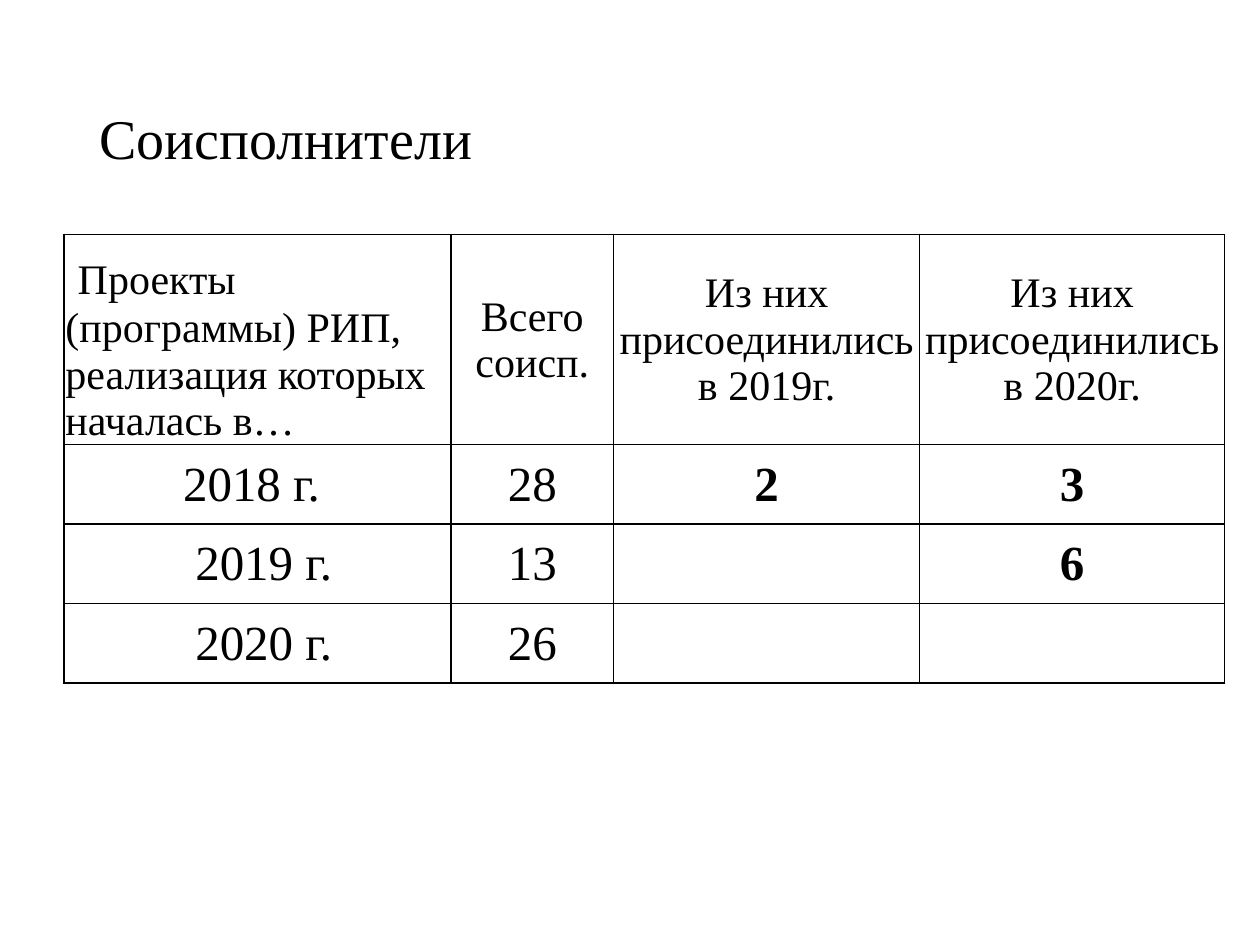
from lxml import etree
from pptx import Presentation
from pptx.dml.color import RGBColor
from pptx.enum.text import MSO_ANCHOR, PP_ALIGN
from pptx.oxml.ns import qn
from pptx.util import Inches, Pt

CENTER, LEFT = PP_ALIGN.CENTER, PP_ALIGN.LEFT
MIDDLE, BOTTOM = MSO_ANCHOR.MIDDLE, MSO_ANCHOR.BOTTOM
BLACK = RGBColor(0, 0, 0)
FONT = "Times New Roman"

TITLE = "Соисполнители"
HEADER = [
    " Проекты (программы) РИП, реализация которых началась в… ",
    "Всего соисп.",
    "Из них присоединились в 2019г.",
    "Из них присоединились в 2020г.",
]
BODY = [
    ["2018 г. ", "28", "2", "3"],
    [" 2019 г.", "13", "", "6"],
    [" 2020 г.", "26", "", ""],
]
COLUMN_WIDTHS = [3.07, 1.29, 2.43, 2.42]
ROW_HEIGHTS = [1.67] + [0.63] * len(BODY)
HEADER_SIZE, BODY_SIZE = 24, 28
FIRST_BOLD_COLUMN = 2


def set_font(font, size, bold=False):
    font.name = FONT
    font.size = Pt(size)
    font.bold = bold
    font.color.rgb = BLACK


def add_borders(cell):
    properties = cell._tc.get_or_add_tcPr()
    for position, side in enumerate(("lnL", "lnR", "lnT", "lnB")):
        line = etree.Element(qn(f"a:{side}"), w=str(Pt(1)))
        fill = etree.SubElement(line, qn("a:solidFill"))
        etree.SubElement(fill, qn("a:srgbClr"), val=str(BLACK))
        properties.insert(position, line)


def fill_cell(cell, text, row, column):
    cell.fill.background()
    add_borders(cell)
    cell.margin_left = cell.margin_right = cell.margin_top = Inches(0.01)
    cell.margin_bottom = 0
    first = row == column == 0
    cell.vertical_anchor = BOTTOM if first else MIDDLE
    if not text:
        return
    para = cell.text_frame.paragraphs[0]
    para.alignment = LEFT if first else CENTER
    set_font(para.font, BODY_SIZE if row else HEADER_SIZE,
             bold=row > 0 and column >= FIRST_BOLD_COLUMN)
    if first:
        # The leading space is set larger than the heading itself.
        lead = para.add_run()
        lead.text, text = text[0], text[1:]
        lead.font.size = Pt(BODY_SIZE)
    para.add_run().text = text


deck = Presentation()
deck.slide_width, deck.slide_height = Inches(10), Inches(7.5)
page = deck.slides.add_slide(deck.slide_layouts[5])

title = page.shapes.title
title.left, title.top = Inches(0.69), Inches(0.83)
title.width, title.height = Inches(8.62), Inches(0.59)
title.text_frame.text = TITLE
title.text_frame.vertical_anchor = MIDDLE
title_para = title.text_frame.paragraphs[0]
title_para.alignment = LEFT
title_para.line_spacing = 0.9
set_font(title_para.font, 32)

rows = [HEADER] + BODY
table = page.shapes.add_table(
    len(rows), len(HEADER), Inches(0.51), Inches(1.86),
    Inches(sum(COLUMN_WIDTHS)), Inches(sum(ROW_HEIGHTS))).table
table.first_row = table.horz_banding = False
for column, width in zip(table.columns, COLUMN_WIDTHS):
    column.width = Inches(width)
for table_row, height in zip(table.rows, ROW_HEIGHTS):
    table_row.height = Inches(height)
for r, texts in enumerate(rows):
    for c, text in enumerate(texts):
        fill_cell(table.cell(r, c), text, r, c)

deck.save("out.pptx")
